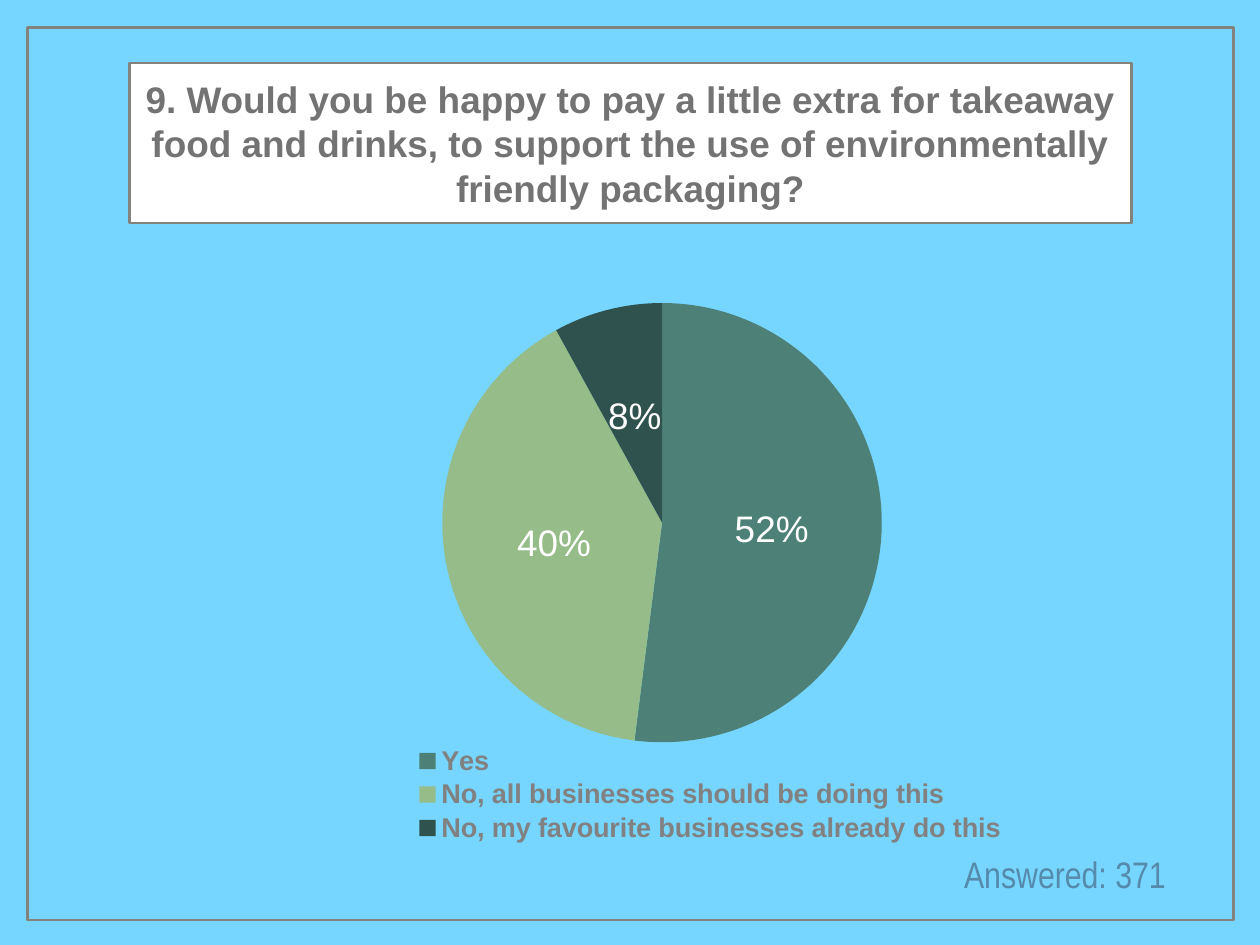
from lxml import etree
from pptx import Presentation
from pptx.chart.data import CategoryChartData
from pptx.dml.color import RGBColor
from pptx.enum import chart as charts, shapes, text
from pptx.oxml import ns
from pptx.util import Inches, Pt

ANSWERS = {
    "Yes": (52, "4D8178"),
    "No, all businesses should be doing this": (40, "95BC89"),
    "No, my favourite businesses already do this": (8, "2F524F"),
}


def rgb(value):
    return RGBColor.from_string(value)


def set_font(font, size, color, name="Arial", bold=False):
    font.size = Pt(size)
    font.name = name
    font.bold = bold
    font.color.rgb = rgb(color)


def add_frame(s, left, top, width, height, fill=None):
    sp = s.shapes.add_shape(shapes.MSO_SHAPE.RECTANGLE, Inches(left),
                            Inches(top), Inches(width), Inches(height))
    sp.shadow.inherit = False
    if fill:
        sp.fill.solid()
        sp.fill.fore_color.rgb = rgb(fill)
    else:
        sp.fill.background()
    sp.line.color.rgb = rgb("83827D")
    sp.line.width = Pt(2)
    return sp


def write_text(sp, content, **style):
    tf = sp.text_frame
    tf.word_wrap = True
    tf.vertical_anchor = text.MSO_ANCHOR.MIDDLE
    tf.margin_left = tf.margin_right = Inches(0.06)
    tf.margin_top = tf.margin_bottom = Inches(0.06)
    p = tf.paragraphs[0]
    p.alignment = text.PP_ALIGN.CENTER
    r = p.add_run()
    r.text = content
    set_font(r.font, **style)
    return tf


def set_layout(parent, after, inner=False, **box):
    for old in parent.findall(ns.qn("c:layout")):
        parent.remove(old)
    layout = etree.Element(ns.qn("c:layout"))
    manual = etree.SubElement(layout, ns.qn("c:manualLayout"))
    settings = {"xMode": "edge", "yMode": "edge", **box}
    if inner:
        settings = {"layoutTarget": "inner", **settings}
    for tag, value in settings.items():
        etree.SubElement(manual, ns.qn(f"c:{tag}")).set("val", str(value))
    if after is None:
        parent.insert(0, layout)
    else:
        after.addnext(layout)


def add_pie(s, left, top, width, height):
    data = CategoryChartData()
    data.categories = list(ANSWERS)
    data.add_series("Series 1", [value for value, _ in ANSWERS.values()])
    chart = s.shapes.add_chart(
        charts.XL_CHART_TYPE.PIE, Inches(left), Inches(top),
        Inches(width), Inches(height), data).chart
    chart.has_title = False
    set_font(chart.font, 10, "558AAB")

    plot = chart.plots[0]
    plot.vary_by_categories = True
    for i, (_, color) in enumerate(ANSWERS.values()):
        fill = plot.series[0].points[i].format.fill
        fill.solid()
        fill.fore_color.rgb = rgb(color)

    plot.has_data_labels = True
    labels = plot.data_labels
    labels.show_percentage = True
    labels.show_value = False
    labels.number_format = "#,##0%"
    labels.number_format_is_linked = False
    labels.position = charts.XL_LABEL_POSITION.CENTER
    set_font(labels.font, 30, "FFFFFF")

    chart.has_legend = True
    legend = chart.legend
    legend.position = charts.XL_LEGEND_POSITION.BOTTOM
    legend.include_in_layout = True
    set_font(legend.font, 22, "818181", bold=True)

    root = chart._chartSpace
    set_layout(root.find(".//" + ns.qn("c:plotArea")), None, inner=True,
               x=0.23, y=0.01, w=0.46, h=0.8)
    legend_xml = root.find(".//" + ns.qn("c:legend"))
    set_layout(legend_xml, legend_xml.find(ns.qn("c:legendPos")),
               x=0.19, y=0.81, w=0.64, h=0.19)


def main():
    prs = Presentation()
    prs.slide_width = Inches(14.22)
    prs.slide_height = Inches(10.67)
    s = prs.slides.add_slide(prs.slide_layouts[6])
    s.background.fill.solid()
    s.background.fill.fore_color.rgb = rgb("76D6FF")

    add_frame(s, 0.31, 0.31, 13.61, 10.08)
    question = add_frame(s, 1.46, 0.71, 11.31, 1.81, fill="FFFFFF")
    write_text(question,
               "9. Would you be happy to pay a little extra for takeaway food "
               "and drinks, to support the use of environmentally friendly "
               "packaging?", size=30, color="737373", bold=True)
    add_pie(s, 2.49, 3.36, 10.83, 6.2)
    answered = s.shapes.add_textbox(Inches(10.26), Inches(9.56),
                                    Inches(3.52), Inches(0.61))
    tf = write_text(answered, "Answered: 371", size=30, color="558AAB",
                    name="Arial Narrow")
    tf.auto_size = text.MSO_AUTO_SIZE.SHAPE_TO_FIT_TEXT
    prs.save("out.pptx")


if __name__ == "__main__":
    main()
